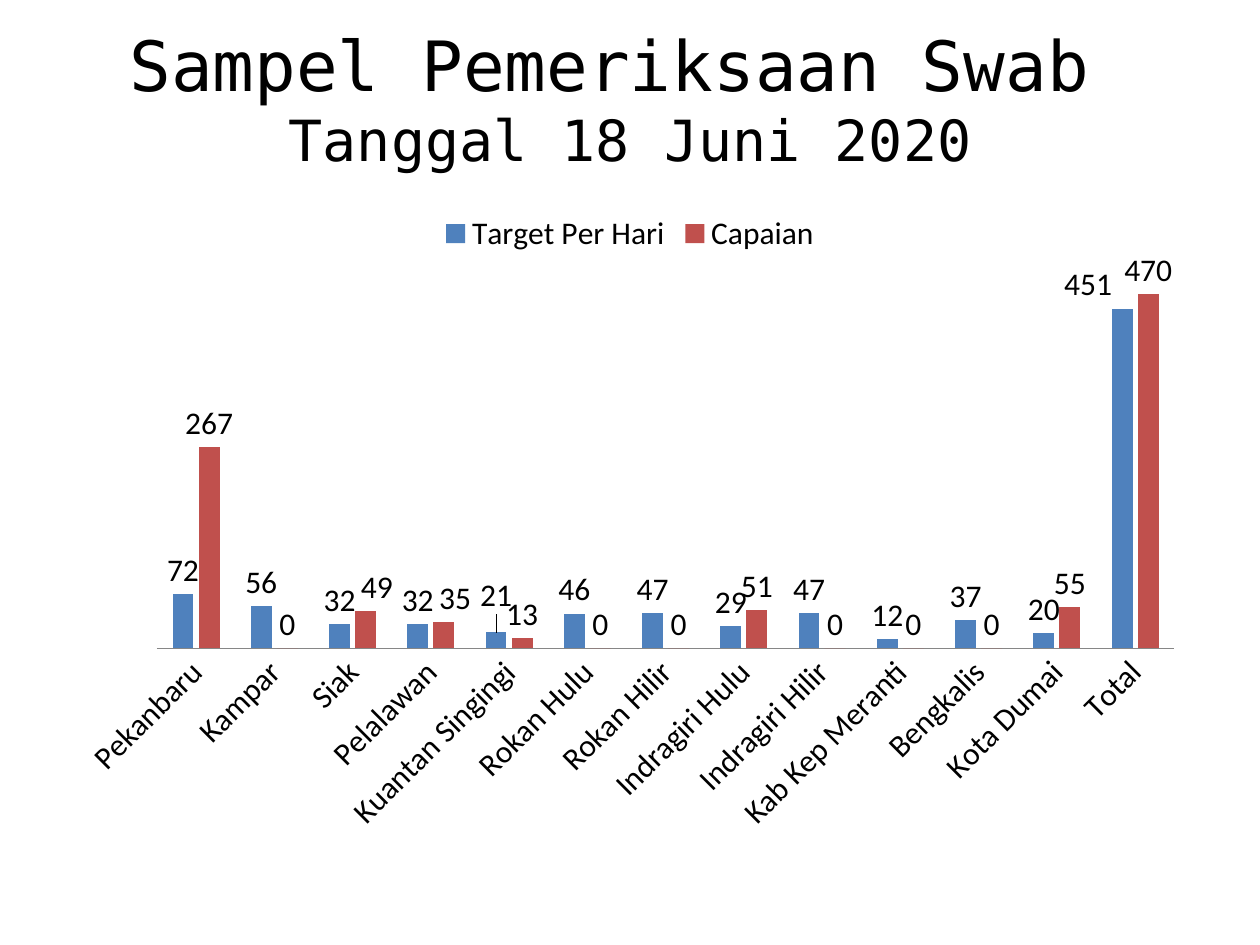
from lxml.etree import SubElement
from pptx import Presentation
from pptx.chart.data import CategoryChartData
from pptx.dml.color import RGBColor
from pptx.enum.chart import (XL_CHART_TYPE, XL_LABEL_POSITION,
                             XL_LEGEND_POSITION, XL_TICK_MARK)
from pptx.enum.text import MSO_ANCHOR, PP_ALIGN
from pptx.oxml.ns import qn
from pptx.util import Pt

BLACK = RGBColor(0x00, 0x00, 0x00)
BLUE = RGBColor(0x4F, 0x81, 0xBD)
RED = RGBColor(0xC0, 0x50, 0x4D)
GRAY = RGBColor(0x86, 0x86, 0x86)

TITLE_LINES = [("Sampel Pemeriksaan Swab ", 39.6), ("Tanggal 18 Juni 2020", 32.4)]

# Region, daily target, result
SAMPLES = [
    ("Pekanbaru", 72, 267), ("Kampar", 56, 0), ("Siak", 32, 49),
    ("Pelalawan", 32, 35), ("Kuantan Singingi", 21, 13),
    ("Rokan Hulu", 46, 0), ("Rokan Hilir", 47, 0),
    ("Indragiri Hulu", 29, 51), ("Indragiri Hilir", 47, 0),
    ("Kab Kep Meranti", 12, 0), ("Bengkalis", 37, 0),
    ("Kota Dumai", 20, 55), ("Total", 451, 470),
]
SERIES = [("Target Per Hari", BLUE), ("Capaian", RED)]

# (series, point): label shift as a fraction of the chart size
LABEL_SHIFTS = {(0, 4): (0, -0.02), (0, 12): (-0.03, 0),
                (1, 2): (0.01, 0), (1, 3): (0.01, 0)}


def apply_format(target, values):
    for name, value in values.items():
        setattr(target, name, value)


class SlideBuilder:
    title_font = "DejaVu Sans Mono"
    chart_font = {"name": "Calibri", "size": Pt(18)}

    def __init__(self, slide):
        self.slide = slide

    def add_title(self, lines, left, top, width, height):
        shape = self.slide.shapes.add_textbox(Pt(left), Pt(top), Pt(width), Pt(height))
        frame = shape.text_frame
        apply_format(frame, {"word_wrap": True, "vertical_anchor": MSO_ANCHOR.MIDDLE})
        paragraph = frame.paragraphs[0]
        paragraph.alignment = PP_ALIGN.CENTER
        for index, (text, size) in enumerate(lines):
            if index:
                paragraph.add_line_break()
            run = paragraph.add_run()
            run.text = text
            apply_format(run.font, {"name": self.title_font, "size": Pt(size)})
            run.font.color.rgb = BLACK

    def add_column_chart(self, rows, series_styles, left, top, width, height):
        names, *columns = zip(*rows)
        data = CategoryChartData()
        data.categories = names
        for (name, _), values in zip(series_styles, columns):
            data.add_series(name, values)
        chart = self.slide.shapes.add_chart(
            XL_CHART_TYPE.COLUMN_CLUSTERED, Pt(left), Pt(top), Pt(width), Pt(height), data
        ).chart
        apply_format(chart, {"has_title": False, "has_legend": True})
        apply_format(chart.font, self.chart_font)
        chart.font.color.rgb = BLACK
        apply_format(chart.legend, {"position": XL_LEGEND_POSITION.TOP,
                                    "include_in_layout": False})

        # Axes
        apply_format(chart.value_axis, {"visible": False, "has_major_gridlines": False})
        axis = chart.category_axis
        apply_format(axis, {"major_tick_mark": XL_TICK_MARK.NONE,
                            "minor_tick_mark": XL_TICK_MARK.NONE})
        axis.format.line.color.rgb = GRAY
        apply_format(axis.tick_labels.font, self.chart_font)
        chart.element.xpath(".//c:catAx/c:txPr/a:bodyPr")[0].set("rot", "-2700000")

        # Columns and their value labels
        plot = chart.plots[0]
        apply_format(plot, {"gap_width": 150, "overlap": -25, "vary_by_categories": False})
        for series, (_, color) in zip(plot.series, series_styles):
            series.format.fill.solid()
            series.format.fill.fore_color.rgb = color
            apply_format(series.data_labels, {"show_value": True,
                                              "position": XL_LABEL_POSITION.OUTSIDE_END})
        return chart

    def shift_label(self, chart, series_index, point_index, shift):
        point = chart.plots[0].series[series_index].points[point_index]
        point.data_label.position = XL_LABEL_POSITION.OUTSIDE_END
        label_index = chart.element.xpath(
            f".//c:ser[c:idx/@val={series_index}]//c:dLbl/c:idx[@val={point_index}]")[0]
        layout = SubElement(label_index.getparent(), qn("c:layout"))
        label_index.addnext(layout)
        manual = SubElement(layout, qn("c:manualLayout"))
        for axis, value in zip("xy", shift):
            SubElement(manual, qn(f"c:{axis}")).set("val", str(value))


def main():
    presentation = Presentation()
    apply_format(presentation, {"slide_width": Pt(720), "slide_height": Pt(540)})
    builder = SlideBuilder(presentation.slides.add_slide(presentation.slide_layouts[6]))

    # Heading
    builder.add_title(TITLE_LINES, 12, 21.6, 696, 68.4)

    # Target against result for each region
    chart = builder.add_column_chart(SAMPLES, SERIES, 36, 113.76, 648, 368.64)
    for (series_index, point_index), shift in LABEL_SHIFTS.items():
        builder.shift_label(chart, series_index, point_index, shift)

    presentation.save("out.pptx")


if __name__ == "__main__":
    main()
